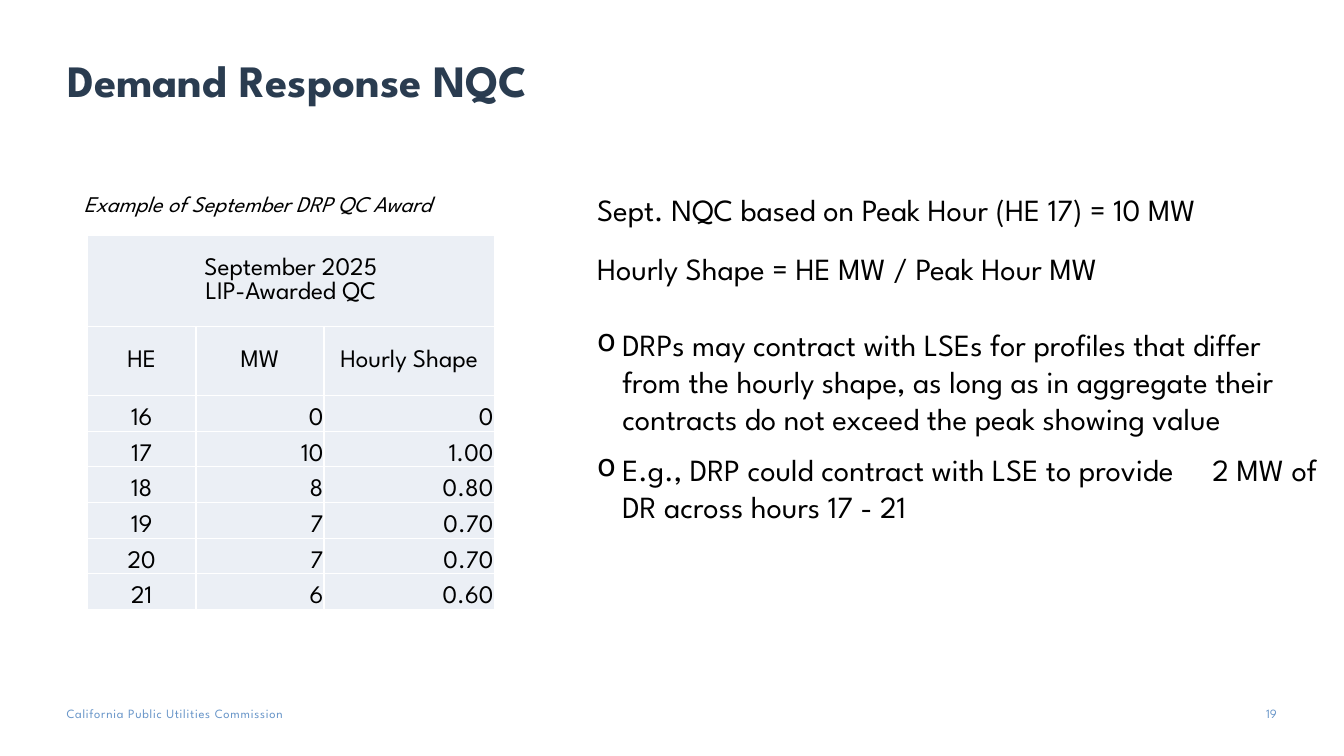
from lxml import etree
from pptx import Presentation
from pptx.dml.color import RGBColor
from pptx.enum.text import MSO_ANCHOR, PP_ALIGN
from pptx.oxml.ns import qn
from pptx.util import Pt

PX = 6350  # EMU; the slide is 1920 x 1080 px
FONT = "League Spartan"
NAVY = RGBColor(0x2A, 0x3C, 0x50)
BLUE = RGBColor(0x69, 0x96, 0xC9)
BLACK = RGBColor(0, 0, 0)
WHITE = RGBColor(0xFF, 0xFF, 0xFF)
PALE = RGBColor(0xEB, 0xEF, 0xF5)
LEFT, CENTER, RIGHT = PP_ALIGN.LEFT, PP_ALIGN.CENTER, PP_ALIGN.RIGHT
TOP, MIDDLE, BOTTOM = MSO_ANCHOR.TOP, MSO_ANCHOR.MIDDLE, MSO_ANCHOR.BOTTOM
BODY_INSETS = (0, 7, 14, 7)

HOURS = [
    ("16", "0", "0"),
    ("17", "10", "1.00"),
    ("18", "8", "0.80"),
    ("19", "7", "0.70"),
    ("20", "7", "0.70"),
    ("21", "6", "0.60"),
]


def add_frame(s, box, insets=(0, 0, 0, 0), anchor=TOP):
    tf = s.shapes.add_textbox(*(v * PX for v in box)).text_frame
    tf.word_wrap = True
    tf.vertical_anchor = anchor
    tf.margin_left, tf.margin_top, tf.margin_right, tf.margin_bottom = (
        v * PX for v in insets)
    return tf


def write(tf, text, size, color=BLACK, bold=False, italic=False, align=LEFT,
          before=0, after=0, margin=0, bullet=None, tab=None, tracking=None):
    """Fill the empty first paragraph, or append a new one."""
    p = tf.paragraphs[0]
    if p.runs:
        p = tf.add_paragraph()
        p.space_before = Pt(before)
    p.alignment = align
    p.space_after = Pt(after)
    pPr = p._p.get_or_add_pPr()
    if margin:
        pPr.set("marL", str(margin * PX))
        pPr.set("indent", str(-margin * PX if bullet else 0))
    if bullet:
        etree.SubElement(pPr, qn("a:buChar"), char=bullet)
    if tab:
        tabs = etree.SubElement(pPr, qn("a:tabLst"))
        etree.SubElement(tabs, qn("a:tab"), pos=str(tab * PX), algn="l")
    for i, part in enumerate(text.split("\n")):
        if i:
            p.add_line_break()
        r = p.add_run()
        r.text = part
        font = r.font
        font.name, font.size, font.bold, font.italic = FONT, Pt(size), bold, italic
        font.color.rgb = color
        if tracking:
            r._r.get_or_add_rPr().set("spc", str(tracking))


def set_cell(cell, text, align, anchor):
    cell.margin_left = cell.margin_top = cell.margin_right = PX
    cell.margin_bottom = 0
    cell.vertical_anchor = anchor
    write(cell.text_frame, text, 18, align=align)
    tcPr = cell._tc.get_or_add_tcPr()
    for side in ("lnL", "lnR", "lnT", "lnB"):
        ln = etree.SubElement(tcPr, qn(f"a:{side}"), w=str(Pt(1)))
        fill = etree.SubElement(ln, qn("a:solidFill"))
        etree.SubElement(fill, qn("a:srgbClr"), val=str(WHITE))
    cell.fill.solid()
    cell.fill.fore_color.rgb = PALE


def add_award_table(s, x, y):
    widths = [155, 183, 243]
    heights = [131, 98] + [51] * len(HOURS)
    table = s.shapes.add_table(len(heights), len(widths), x * PX, y * PX,
                               sum(widths) * PX, sum(heights) * PX).table
    table.first_row = table.horz_banding = False
    for column, width in zip(table.columns, widths):
        column.width = width * PX
    for row, height in zip(table.rows, heights):
        row.height = height * PX
    table.cell(0, 0).merge(table.cell(0, 2))
    set_cell(table.cell(0, 0), "September 2025\nLIP-Awarded QC", CENTER, MIDDLE)
    for col, text in enumerate(("HE", "MW", "Hourly Shape")):
        set_cell(table.cell(1, col), text, CENTER, MIDDLE)
    for row, values in enumerate(HOURS, 2):
        for col, text in enumerate(values):
            set_cell(table.cell(row, col), text, RIGHT if col else CENTER, BOTTOM)


def add_award(s, x, y, w, h):
    tf = add_frame(s, (x, y, w, h), BODY_INSETS)
    write(tf, "Example of September DRP QC Award", 16, italic=True, margin=24)
    add_award_table(s, x + 29, y + 71)


def add_rules(s, x, y, w, h):
    tf = add_frame(s, (x, y, w, h), BODY_INSETS)
    body = dict(size=22, before=10)
    item = dict(body, margin=36, bullet="o")
    write(tf, "Sept. NQC based on Peak Hour (HE 17) = 10 MW", after=6, **body)
    write(tf, "Hourly Shape = HE MW / Peak Hour MW", after=18, **body)
    write(tf, "DRPs may contract with LSEs for profiles that differ from the "
          "hourly shape, as long as in aggregate their contracts do not exceed "
          "the peak showing value", **item)
    write(tf, "E.g., DRP could contract with LSE to provide\t2 MW of DR across "
          "hours 17 - 21", tab=879, **item)


def add_footer(s, x, y, w, h):
    write(add_frame(s, (x, y, 462, h)), "California Public Utilities Commission",
          9, BLUE, tracking=50)
    write(add_frame(s, (x + w - 60, y, 60, h)), "19", 9, BLUE, align=RIGHT)


def main():
    prs = Presentation()
    prs.slide_width, prs.slide_height = 1920 * PX, 1080 * PX
    s = prs.slides.add_slide(prs.slide_layouts[6])
    title = add_frame(s, (96, 57, 1730, 102), BODY_INSETS, BOTTOM)
    write(title, "Demand Response NQC", 32, NAVY, bold=True)
    add_award(s, 96, 265, 685, 707)
    add_rules(s, 853, 265, 1056, 815)
    add_footer(s, 95, 1008, 1729, 25)
    prs.save("out.pptx")


if __name__ == "__main__":
    main()
